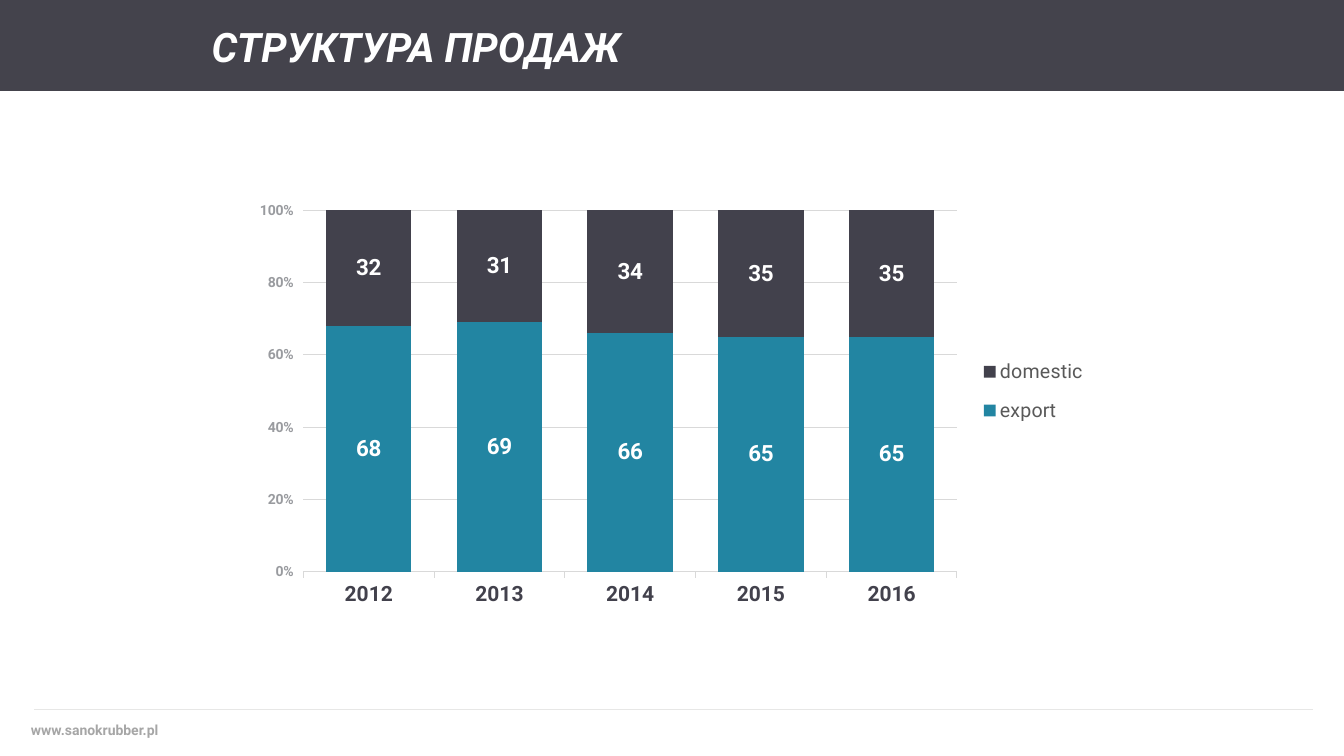
from lxml.etree import SubElement
from pptx import Presentation
from pptx.chart.data import CategoryChartData
from pptx.dml.color import RGBColor
from pptx.enum.chart import XL_CHART_TYPE, XL_LABEL_POSITION, XL_LEGEND_POSITION, XL_TICK_MARK
from pptx.enum.shapes import MSO_CONNECTOR, MSO_SHAPE
from pptx.enum.text import MSO_ANCHOR, MSO_AUTO_SIZE, PP_ALIGN
from pptx.oxml import parse_xml
from pptx.oxml.ns import nsdecls, qn
from pptx.util import Cm, Pt

WHITE = RGBColor(0xFF, 0xFF, 0xFF)
BAND_GREY = RGBColor(0x44, 0x43, 0x4C)
DOMESTIC_GREY = RGBColor(0x42, 0x41, 0x4C)
EXPORT_TEAL = RGBColor(0x22, 0x85, 0xA2)
GRID_GREY = RGBColor(0xD9, 0xD9, 0xD9)
PERCENT_GREY = RGBColor(0x99, 0x9B, 0x9F)
LEGEND_GREY = RGBColor(0x59, 0x59, 0x59)
RULE_GREY = RGBColor(0xE7, 0xE7, 0xE6)
ADDRESS_GREY = RGBColor(0xA6, 0xA6, 0xA6)

YEARS = ["2012", "2013", "2014", "2015", "2016"]
SALES = [
    ("export", [68, 69, 66, 65, 65], EXPORT_TEAL),
    ("domestic", [32, 31, 34, 35, 35], DOMESTIC_GREY),
]


def style_font(font, size, color, bold=False):
    font.name = "Roboto"
    font.size = Pt(size)
    font.bold = bold
    font.color.rgb = color


def set_line(line, color):
    line.color.rgb = color
    line.width = Pt(0.75)


def layout_xml(x, y, w, h, inner=False):
    target = '<c:layoutTarget val="inner"/>' if inner else ""
    return parse_xml(
        f'<c:layout {nsdecls("c")}><c:manualLayout>{target}'
        '<c:xMode val="edge"/><c:yMode val="edge"/>'
        f'<c:x val="{x}"/><c:y val="{y}"/><c:w val="{w}"/><c:h val="{h}"/>'
        "</c:manualLayout></c:layout>"
    )


def add_header(slide, left, top, width, height):
    band = slide.shapes.add_shape(MSO_SHAPE.RECTANGLE, left, top, width, height)
    band.shadow.inherit = False
    band.fill.solid()
    band.fill.fore_color.rgb = BAND_GREY
    band.line.fill.background()

    title = slide.shapes.title
    title.element.addprevious(band.element)
    title.left, title.top = left + Cm(5.08), top + Cm(0.23)
    title.width, title.height = Cm(16.03), Cm(1.88)
    frame = title.text_frame
    frame.text = "СТРУКТУРА ПРОДАЖ"
    frame.vertical_anchor = MSO_ANCHOR.MIDDLE
    frame.auto_size = MSO_AUTO_SIZE.NONE
    heading = frame.paragraphs[0]
    heading.alignment = PP_ALIGN.LEFT
    style_font(heading.runs[0].font, 29, WHITE, bold=True)
    heading.runs[0].font.italic = True


def add_footer(slide, left, top, width, height):
    rule = slide.shapes.add_connector(
        MSO_CONNECTOR.STRAIGHT, left + Cm(0.86), top, left + width - Cm(0.79), top
    )
    set_line(rule.line, RULE_GREY)
    SubElement(rule.element.spPr, qn("a:effectLst"))

    address = slide.shapes.add_textbox(left + Cm(0.53), top + Cm(0.18), Cm(3.81), height - Cm(0.18))
    frame = address.text_frame
    frame.word_wrap = False
    frame.text = "www.sanokrubber.pl"
    style_font(frame.paragraphs[0].runs[0].font, 10, ADDRESS_GREY, bold=True)


def style_axes(chart):
    years = chart.category_axis
    years.major_tick_mark = XL_TICK_MARK.OUTSIDE
    set_line(years.format.line, GRID_GREY)
    style_font(years.tick_labels.font, 15, DOMESTIC_GREY, bold=True)

    percent = chart.value_axis
    percent.minimum_scale, percent.maximum_scale, percent.major_unit = 0, 1, 0.2
    percent.major_tick_mark = XL_TICK_MARK.OUTSIDE
    percent.format.line.fill.background()
    set_line(percent.major_gridlines.format.line, GRID_GREY)
    percent.tick_labels.number_format = "0%"
    percent.tick_labels.number_format_is_linked = False
    style_font(percent.tick_labels.font, 10, PERCENT_GREY, bold=True)


def add_sales_chart(slide, left, top, width, height):
    sales_data = CategoryChartData()
    sales_data.categories = YEARS
    for market, shares, _ in SALES:
        sales_data.add_series(market, shares)
    chart = slide.shapes.add_chart(
        XL_CHART_TYPE.COLUMN_STACKED_100, left, top, width, height, sales_data
    ).chart
    chart.has_title = False
    chart.font.name = "Calibri"
    chart.font.size = Pt(10)
    style_axes(chart)

    columns = chart.plots[0]
    columns.gap_width, columns.overlap = 53, 100
    columns.vary_by_categories = False
    for market, (_, _, color) in zip(columns.series, SALES):
        market.format.fill.solid()
        market.format.fill.fore_color.rgb = color
        labels = market.data_labels
        labels.show_value = True
        labels.position = XL_LABEL_POSITION.CENTER
        style_font(labels.font, 16, WHITE, bold=True)

    chart.has_legend = True
    legend = chart.legend
    legend.position = XL_LEGEND_POSITION.RIGHT
    legend.include_in_layout = False
    style_font(legend.font, 14, LEGEND_GREY)

    plot_area = chart.element.find(".//" + qn("c:plotArea"))
    for automatic in plot_area.findall(qn("c:layout")):
        plot_area.remove(automatic)
    plot_area.insert(0, layout_xml(0.07, 0.04, 0.77, 0.86, inner=True))
    legend_element = chart.element.find(".//" + qn("c:legend"))
    for automatic in legend_element.findall(qn("c:layout")):
        legend_element.remove(automatic)
    legend_element.find(qn("c:legendPos")).addnext(layout_xml(0.86, 0.36, 0.14, 0.22))


def main():
    deck = Presentation()
    deck.slide_width, deck.slide_height = Cm(33.87), Cm(19.05)
    slide = deck.slides.add_slide(deck.slide_layouts[5])
    add_header(slide, 0, 0, deck.slide_width, Cm(2.29))
    add_footer(slide, 0, Cm(17.88), deck.slide_width, Cm(1.17))
    add_sales_chart(slide, Cm(6.15), Cm(4.88), Cm(21.39), Cm(10.59))
    deck.save("out.pptx")


if __name__ == "__main__":
    main()
